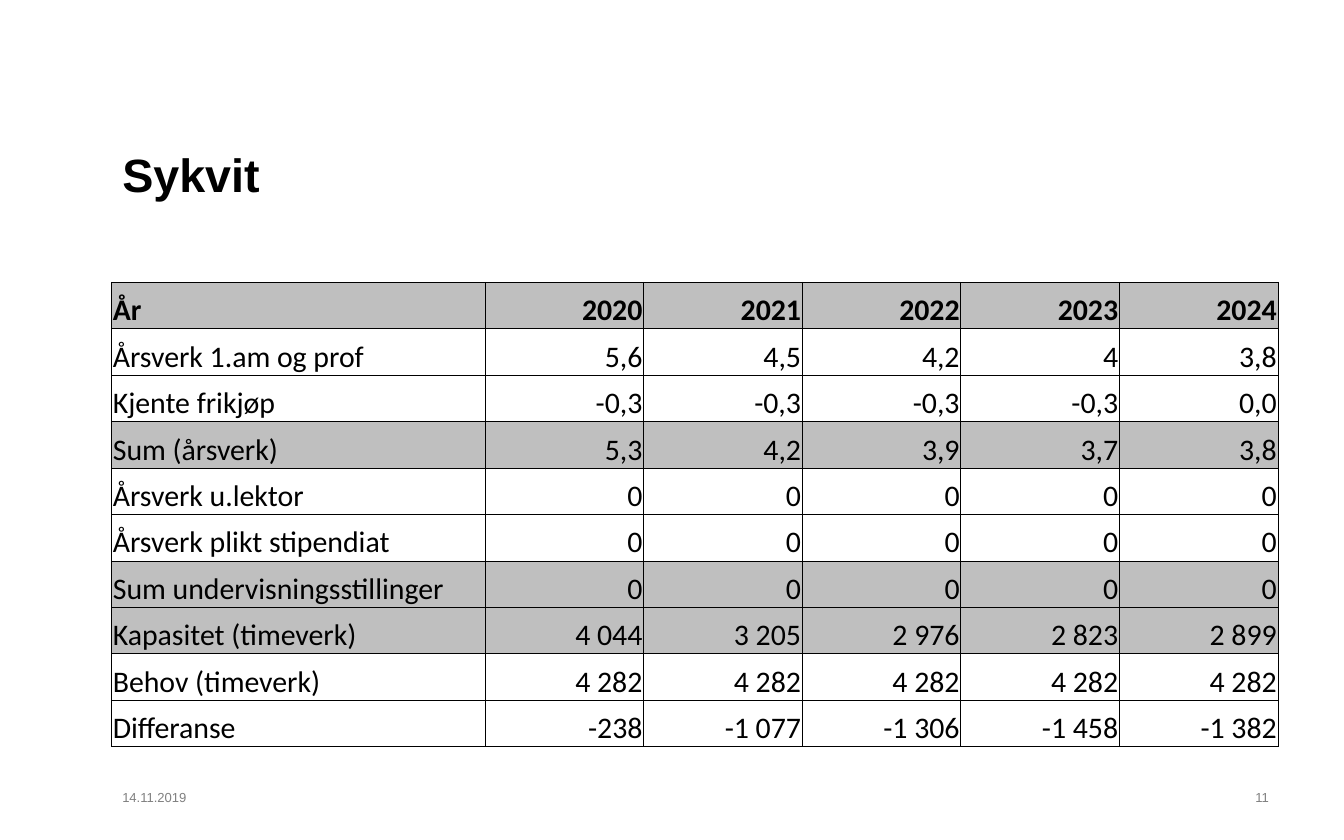
from lxml import etree
from pptx import Presentation
from pptx.dml.color import RGBColor
from pptx.enum.text import MSO_ANCHOR, PP_ALIGN
from pptx.oxml.ns import qn
from pptx.util import Inches, Pt

LEFT, RIGHT = PP_ALIGN.LEFT, PP_ALIGN.RIGHT
TOP, MIDDLE, BOTTOM = MSO_ANCHOR.TOP, MSO_ANCHOR.MIDDLE, MSO_ANCHOR.BOTTOM
TITLE_ONLY = 5
COLORS = {"ink": "000000", "foot": "808080", "band": "BFBFBF"}

ROWS = [
    ("År", "2020", "2021", "2022", "2023", "2024"),
    ("Årsverk 1.am og prof", "5,6", "4,5", "4,2", "4", "3,8"),
    ("Kjente frikjøp", "-0,3", "-0,3", "-0,3", "-0,3", "0,0"),
    ("Sum (årsverk)", "5,3", "4,2", "3,9", "3,7", "3,8"),
    ("Årsverk u.lektor", "0", "0", "0", "0", "0"),
    ("Årsverk plikt stipendiat", "0", "0", "0", "0", "0"),
    ("Sum undervisningsstillinger", "0", "0", "0", "0", "0"),
    ("Kapasitet (timeverk)", "4 044", "3 205", "2 976", "2 823", "2 899"),
    ("Behov (timeverk)", "4 282", "4 282", "4 282", "4 282", "4 282"),
    ("Differanse", "-238", "-1 077", "-1 306", "-1 458", "-1 382"),
]
BANDS = {0, 3, 6, 7}


def color(name):
    return RGBColor.from_string(COLORS[name])


def set_pad(box, left, top, right, bottom):
    """Set the inner margins of a text frame or a table cell."""
    box.margin_left, box.margin_top = Inches(left), Inches(top)
    box.margin_right, box.margin_bottom = Inches(right), Inches(bottom)


def write(frame, text, size, face="Arial", ink="ink", bold=False, align=LEFT):
    para = frame.paragraphs[0]
    para.alignment = align
    run = para.add_run()
    run.text = text
    font = run.font
    font.name, font.size, font.bold = face, Pt(size), bold
    font.color.rgb = color(ink)


def set_frame(shape, anchor):
    frame = shape.text_frame
    frame.word_wrap = True
    frame.vertical_anchor = anchor
    set_pad(frame, 0.08, 0.04, 0.08, 0.04)
    return frame


def add_title(slide, text):
    title = slide.shapes.title
    title.left, title.top = Inches(0.83), Inches(0.77)
    title.width, title.height = Inches(8.66), Inches(1.04)
    write(set_frame(title, MIDDLE), text, 25, bold=True)


def add_foot(slide, text, left, width, align):
    box = slide.shapes.add_textbox(
        Inches(left), Inches(5.83), Inches(width), Inches(0.42))
    write(set_frame(box, TOP), text, 7, ink="foot", align=align)


def add_edges(cell):
    """Draw a thin line on all four sides of a cell."""
    props = cell._tc.get_or_add_tcPr()
    for side in ("a:lnL", "a:lnR", "a:lnT", "a:lnB"):
        line = etree.SubElement(props, qn(side), w=str(Pt(0.5)))
        fill = etree.SubElement(line, qn("a:solidFill"))
        etree.SubElement(fill, qn("a:srgbClr"), val=COLORS["ink"])


def fill_cell(cell, text, row, col):
    cell.vertical_anchor = BOTTOM
    set_pad(cell, 0.01, 0.01, 0.01, 0)
    add_edges(cell)
    if row in BANDS:
        cell.fill.solid()
        cell.fill.fore_color.rgb = color("band")
    else:
        cell.fill.background()
    write(cell.text_frame, text, 16, face="Calibri", bold=row == 0,
          align=RIGHT if col else LEFT)


def add_grid(slide):
    count = len(ROWS[0])
    table = slide.shapes.add_table(
        len(ROWS), count, Inches(0.83), Inches(2.1),
        Inches(8.66), Inches(3.46)).table
    for col in range(count):
        table.columns[col].width = Inches(1.18 if col else 2.78)
    for row, texts in enumerate(ROWS):
        for col, text in enumerate(texts):
            fill_cell(table.cell(row, col), text, row, col)


def main():
    deck = Presentation()
    deck.slide_width, deck.slide_height = Inches(10), Inches(6.25)
    slide = deck.slides.add_slide(deck.slide_layouts[TITLE_ONLY])
    add_title(slide, "Sykvit")
    add_grid(slide)
    add_foot(slide, "14.11.2019", 0.83, 2.08, LEFT)
    add_foot(slide, "11", 8.77, 0.75, RIGHT)
    deck.save("out.pptx")


if __name__ == "__main__":
    main()
